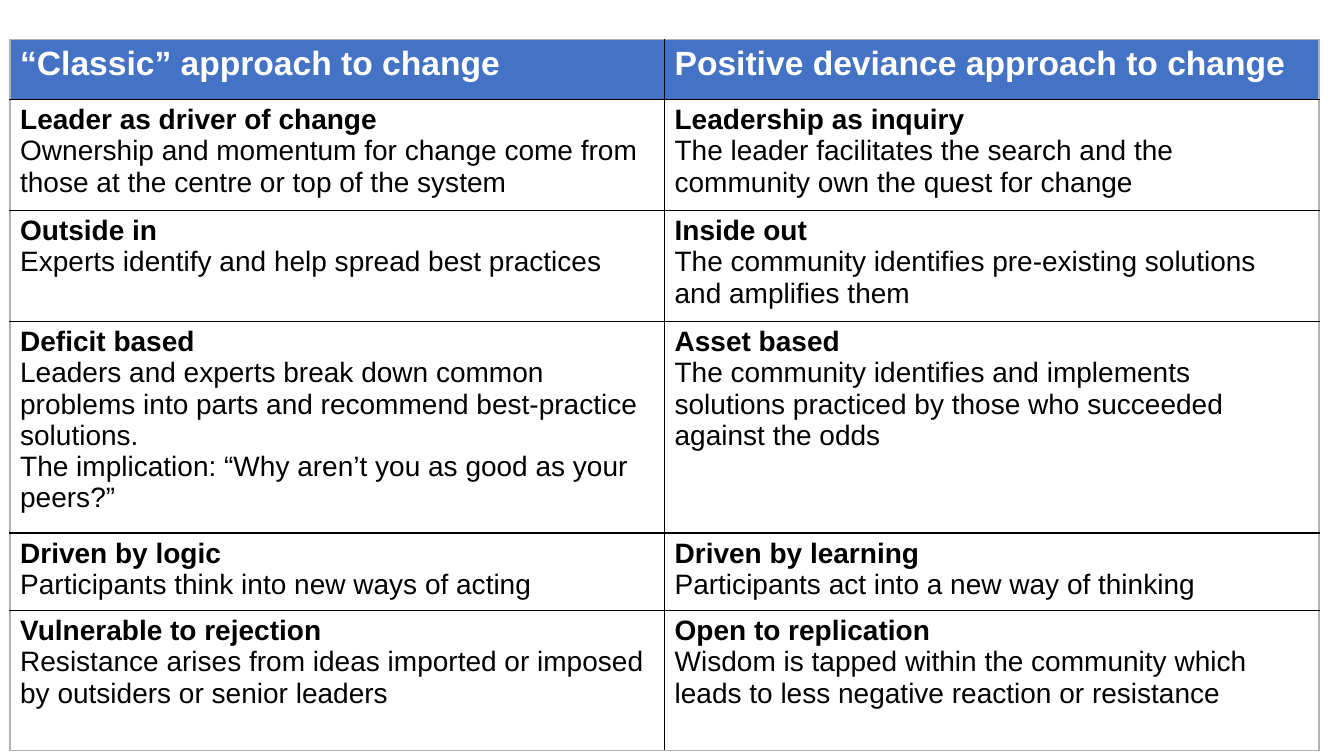
from lxml import etree
from pptx import Presentation
from pptx.dml.color import RGBColor
from pptx.oxml.ns import qn
from pptx.util import Pt

BLUE, WHITE, BLACK, GREY = "4472C4", "FFFFFF", "000000", "B2B2B2"
COLUMN_WIDTH = 467.5
ROW_HEIGHTS = [42.5, 79.3, 79.3, 151.3, 55.2, 100]

# Each cell is a list of paragraphs; the first one is bold.
ROWS = [
    [["“Classic” approach to change"],
     ["Positive deviance approach to change"]],
    [["Leader as driver of change",
      "Ownership and momentum for change come from those at the centre or top of the system"],
     ["Leadership as inquiry",
      "The leader facilitates the search and the community own the quest for change"]],
    [["Outside in",
      "Experts identify and help spread best practices"],
     ["Inside out",
      "The community identifies pre-existing solutions and amplifies them"]],
    [["Deficit based",
      "Leaders and experts break down common problems into parts and recommend "
      "best-practice solutions.",
      "The implication: “Why aren’t you as good as your peers?”"],
     ["Asset based",
      "The community identifies and implements solutions practiced by those who "
      "succeeded against the odds"]],
    [["Driven by logic",
      "Participants think into new ways of acting"],
     ["Driven by learning",
      "Participants act into a new way of thinking"]],
    [["Vulnerable to rejection",
      "Resistance arises from ideas imported or imposed by outsiders or senior leaders"],
     ["Open to replication",
      "Wisdom is tapped within the community which leads to less negative reaction "
      "or resistance"]],
]


def rgb(value):
    return RGBColor.from_string(value)


def set_borders(cell, colors):
    """Draw 1 pt borders; colors maps the sides L, R, T, B, in that order."""
    properties = cell._tc.get_or_add_tcPr()
    for position, (side, color) in enumerate(colors.items()):
        line = etree.Element(qn(f"a:ln{side}"), w=str(Pt(1)))
        fill = etree.SubElement(line, qn("a:solidFill"))
        etree.SubElement(fill, qn("a:srgbClr"), val=color)
        properties.insert(position, line)


deck = Presentation()
deck.slide_width, deck.slide_height = Pt(960), Pt(540)
page = deck.slides.add_slide(deck.slide_layouts[6])

last_row, last_column = len(ROWS) - 1, len(ROWS[0]) - 1
table = page.shapes.add_table(
    len(ROWS), len(ROWS[0]), Pt(7.2), Pt(28.4),
    Pt(COLUMN_WIDTH * len(ROWS[0])), Pt(sum(ROW_HEIGHTS))).table
for column in table.columns:
    column.width = Pt(COLUMN_WIDTH)
for row, height in zip(table.rows, ROW_HEIGHTS):
    row.height = Pt(height)

for row_index, row_texts in enumerate(ROWS):
    is_header = row_index == 0
    for column_index, texts in enumerate(row_texts):
        cell = table.cell(row_index, column_index)
        cell.fill.solid()
        cell.fill.fore_color.rgb = rgb(BLUE if is_header else WHITE)
        set_borders(cell, {
            "L": GREY if column_index == 0 else BLACK,
            "R": GREY if column_index == last_column else BLACK,
            "T": GREY if is_header else BLACK,
            "B": GREY if row_index == last_row else BLACK,
        })
        frame = cell.text_frame
        for text_index, text in enumerate(texts):
            para = frame.add_paragraph() if text_index else frame.paragraphs[0]
            span = para.add_run()
            span.text = text
            format_values = {"name": "Arial", "size": Pt(24 if is_header else 20),
                             "bold": text_index == 0}
            for name, value in format_values.items():
                setattr(span.font, name, value)
            span.font.color.rgb = rgb(WHITE if is_header else BLACK)

deck.save("out.pptx")
